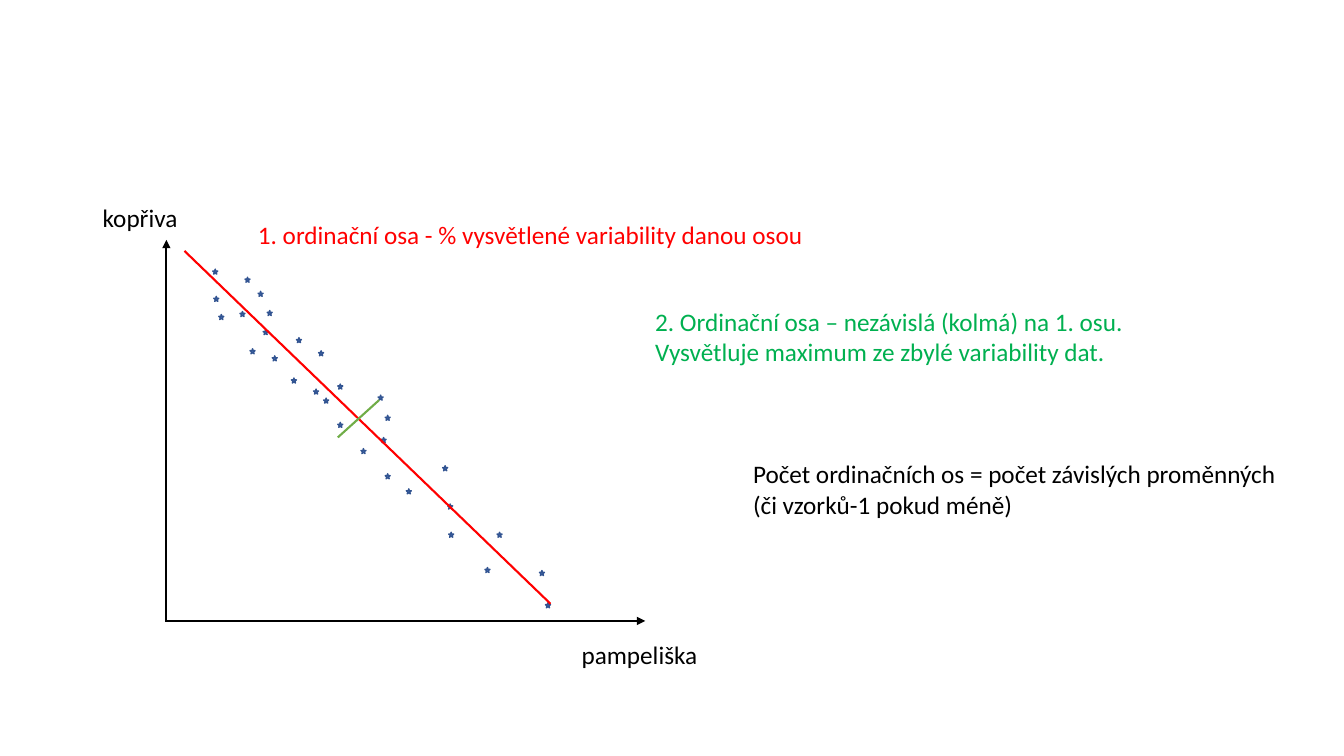
"""Build a slide showing two ordination axes through a scatter of nettle and dandelion samples."""
from typing import NamedTuple

import pptx
import pptx.dml.color
import pptx.enum.shapes
import pptx.enum.text
import pptx.oxml
import pptx.oxml.ns
import pptx.slide
import pptx.util

RGBColor = pptx.dml.color.RGBColor
BLACK = RGBColor(0x00, 0x00, 0x00)
RED = RGBColor(0xFF, 0x00, 0x00)
GREEN = RGBColor(0x00, 0xB0, 0x50)
LEAF = RGBColor(0x70, 0xAD, 0x47)
BLUE = RGBColor(0x44, 0x72, 0xC4)
NAVY = RGBColor(0x32, 0x54, 0x91)

EMU_PER_PX = 9144
STAR_SIZE = 5
FONT = {"name": "Calibri", "size": pptx.util.Pt(18)}
FRAME = {"word_wrap": True, "auto_size": pptx.enum.text.MSO_AUTO_SIZE.SHAPE_TO_FIT_TEXT}


class Line(NamedTuple):
    x1: int
    y1: int
    x2: int
    y2: int
    color: RGBColor
    arrow: bool = False


class Label(NamedTuple):
    x: int
    y: int
    w: int
    h: int
    text: str
    color: RGBColor = BLACK


class Sample(NamedTuple):
    x: int
    y: int


PLOT_AXES = [
    Line(165, 616, 640, 616, BLACK, arrow=True),
    Line(165, 617, 165, 238, BLACK, arrow=True),
]
ORDINATION_AXES = [
    Line(183, 249, 546, 599, RED),
    Line(335, 434, 376, 397, LEAF),
]
LABELS = [
    Label(567, 629, 146, 40, "pampeliška"),
    Label(92, 196, 146, 40, "kopřiva"),
    Label(246, 213, 582, 40, "1. ordinační osa - % vysvětlené variability danou osou", RED),
    Label(640, 299, 510, 71, "2. Ordinační osa – nezávislá (kolmá) na 1. osu. "
          "Vysvětluje maximum ze zbylé variability dat.", GREEN),
    Label(737, 450, 538, 71, "Počet ordinačních os = počet závislých proměnných "
          "(či vzorků-1 pokud méně)"),
]
SAMPLES = [Sample(*xy) for xy in (
    (211, 267), (212, 294), (243, 275), (256, 289), (238, 309), (261, 327),
    (248, 346), (294, 335), (289, 375), (335, 381), (375, 392), (358, 445),
    (403, 485), (439, 462), (444, 500), (445, 528), (493, 528), (481, 563),
    (535, 566), (541, 598), (217, 312), (265, 308), (382, 470), (270, 353),
    (316, 348), (311, 386), (321, 395), (335, 419), (382, 412), (378, 434),
)]


def px(n: int) -> pptx.util.Emu:
    return pptx.util.Emu(n * EMU_PER_PX)


def apply(target: object, values: dict) -> None:
    for name, value in values.items():
        setattr(target, name, value)


def draw_line(s: pptx.slide.Slide, line: Line) -> None:
    sp = s.shapes.add_connector(pptx.enum.shapes.MSO_CONNECTOR.STRAIGHT,
                                px(line.x1), px(line.y1), px(line.x2), px(line.y2))
    sp.line.color.rgb = line.color
    sp.line.width = pptx.util.Pt(1.5)
    if line.arrow:
        ln = sp.line._get_or_add_ln()
        ln.append(pptx.oxml.parse_xml(
            f'<a:tailEnd {pptx.oxml.ns.nsdecls("a")} type="triangle"/>'))
    sp._element.spPr.append(pptx.oxml.parse_xml(
        f'<a:effectLst {pptx.oxml.ns.nsdecls("a")}/>'))


def draw_sample(s: pptx.slide.Slide, sample: Sample) -> None:
    sp = s.shapes.add_shape(pptx.enum.shapes.MSO_SHAPE.STAR_5_POINT, px(sample.x),
                            px(sample.y), px(STAR_SIZE), px(STAR_SIZE))
    sp.shadow.inherit = False
    sp.fill.solid()
    sp.fill.fore_color.rgb = BLUE
    sp.line.color.rgb = NAVY
    sp.line.width = pptx.util.Pt(1)


def draw_label(s: pptx.slide.Slide, label: Label) -> None:
    sp = s.shapes.add_textbox(px(label.x), px(label.y), px(label.w), px(label.h))
    tf = sp.text_frame
    apply(tf, FRAME)
    r = tf.paragraphs[0].add_run()
    r.text = label.text
    apply(r.font, FONT)
    r.font.color.rgb = label.color


def main() -> None:
    prs = pptx.Presentation()
    prs.slide_width, prs.slide_height = px(1333), px(750)
    s = prs.slides.add_slide(prs.slide_layouts.get_by_name("Blank"))
    for line in PLOT_AXES:
        draw_line(s, line)
    for sample in SAMPLES:
        draw_sample(s, sample)
    for line in ORDINATION_AXES:
        draw_line(s, line)
    for label in LABELS:
        draw_label(s, label)
    prs.save("out.pptx")


if __name__ == "__main__":
    main()
